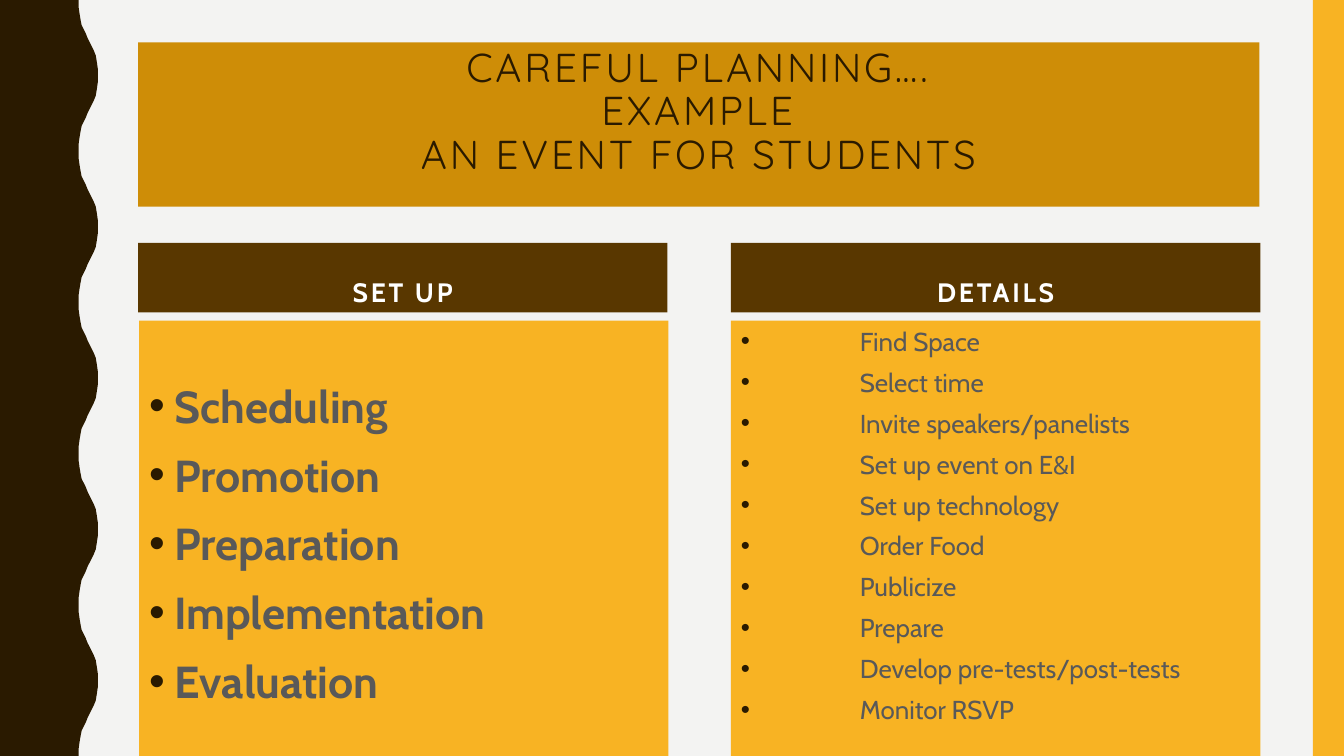
from dataclasses import dataclass

from lxml import etree
from pptx import Presentation
from pptx.dml.color import RGBColor
from pptx.enum.shapes import MSO_SHAPE
from pptx.enum.text import MSO_ANCHOR, PP_ALIGN
from pptx.oxml.ns import qn
from pptx.util import Inches, Pt

RECT = MSO_SHAPE.RECTANGLE
TOP, BOTTOM = MSO_ANCHOR.TOP, MSO_ANCHOR.BOTTOM
LEFT, CENTER = PP_ALIGN.LEFT, PP_ALIGN.CENTER


@dataclass(frozen=True)
class Theme:
    paper: str = "F3F3F2"
    dark: str = "2A1A00"
    brown: str = "593700"
    ochre: str = "CE8D07"
    amber: str = "F8B323"
    gray: str = "595959"
    white: str = "FFFFFF"
    title_font: str = "Quicksand"
    body_font: str = "Cabin"
    title_size: float = 28.8
    heading_size: float = 19
    step_size: float = 32
    detail_size: float = 18.5


T = Theme()
WIDTH, HEIGHT = 13.33, 7.5
PERIOD = 1.5
HALF_WAVE = [(0.78, 0), (0.78, 0.07), (0.79, 0.14), (0.8, 0.2), (0.81, 0.25),
             (0.83, 0.29), (0.85, 0.33), (0.87, 0.38), (0.89, 0.42), (0.91, 0.46),
             (0.93, 0.5), (0.95, 0.55), (0.96, 0.61), (0.97, 0.68), (0.97, 0.75)]
TITLE = "CAREFUL PLANNING….\nEXAMPLE\nAN EVENT FOR STUDENTS"
STEPS = ["Scheduling", "Promotion", "Preparation", "Implementation", "Evaluation"]
DETAILS = ["Find Space", "Select time", "Invite speakers/panelists",
           "Set up event on E&I", "Set up technology", "Order Food", "Publicize",
           "Prepare", "Develop pre-tests/post-tests", "Monitor RSVP"]


def paint(sp, color):
    sp.shadow.inherit = False
    sp.fill.solid()
    sp.fill.fore_color.rgb = RGBColor.from_string(color)
    sp.line.fill.background()


def add_panel(s, x, y, w, h, color, anchor=TOP):
    sp = s.shapes.add_shape(RECT, Inches(x), Inches(y), Inches(w), Inches(h))
    paint(sp, color)
    sp.text_frame.word_wrap = True
    sp.text_frame.vertical_anchor = anchor
    return sp


def add_wave(s):
    wave = HALF_WAVE + [(x, PERIOD - y) for x, y in HALF_WAVE[-2::-1]]
    edge = [(x, y + n * PERIOD) for n in range(round(HEIGHT / PERIOD)) for x, y in wave]
    points = [(Inches(x), Inches(y)) for x, y in edge + [(0, HEIGHT)]]
    builder = s.shapes.build_freeform(0, 0)
    builder.add_line_segments(points, close=True)
    paint(builder.convert_to_shape(), T.dark)


def style(p, font, size, color, bold=False, spacing=0, align=LEFT):
    p.alignment = align
    for r in p.runs:
        r.font.name = font
        r.font.size = Pt(size)
        r.font.bold = bold
        r.font.color.rgb = RGBColor.from_string(color)
        if spacing:
            r.font._element.set("spc", str(spacing * 100))


def add_bullet(p, indent):
    pPr = p._p.get_or_add_pPr()
    pPr.set("marL", str(Inches(indent)))
    pPr.set("indent", str(-Inches(indent)))
    color = etree.SubElement(pPr, qn("a:buClr"))
    etree.SubElement(color, qn("a:srgbClr"), val=T.dark)
    etree.SubElement(pPr, qn("a:buFont"), typeface="Arial")
    etree.SubElement(pPr, qn("a:buChar"), char="•")


def add_title(s, text):
    tf = add_panel(s, 1.37, 0.42, 11.12, 1.63, T.ochre).text_frame
    p = tf.paragraphs[0]
    p.text = text.replace("\n", "\v")
    p.line_spacing = 0.9
    style(p, T.title_font, T.title_size, T.dark, spacing=2, align=CENTER)


def add_heading(s, x, text):
    tf = add_panel(s, x, 2.41, 5.25, 0.69, T.brown, BOTTOM).text_frame
    tf.text = text
    style(tf.paragraphs[0], T.body_font, T.heading_size, T.white, True, 2, CENTER)


def add_list(s, x, items, size, indent, bold=False, line_spacing=1.0, top=0.05):
    tf = add_panel(s, x, 3.18, 5.25, 4.32, T.amber).text_frame
    tf.margin_top = Inches(top)
    tf.text = "\n".join(items)
    for p in tf.paragraphs:
        p.space_before = Pt(7)
        p.line_spacing = line_spacing
        style(p, T.body_font, size, T.gray, bold)
        add_bullet(p, indent)


def main():
    prs = Presentation()
    prs.slide_width, prs.slide_height = Inches(WIDTH), Inches(HEIGHT)
    s = prs.slides.add_slide(prs.slide_layouts[6])
    s.background.fill.solid()
    s.background.fill.fore_color.rgb = RGBColor.from_string(T.paper)
    add_wave(s)
    add_panel(s, 13.02, 0, 0.31, HEIGHT, T.amber)
    add_title(s, TITLE)
    add_heading(s, 1.37, "SET UP")
    add_list(s, 1.38, STEPS, T.step_size, 0.25, True, 1.1, top=0.52)
    add_heading(s, 7.25, "DETAILS")
    add_list(s, 7.25, DETAILS, T.detail_size, 1.18)
    prs.save("out.pptx")


if __name__ == "__main__":
    main()
